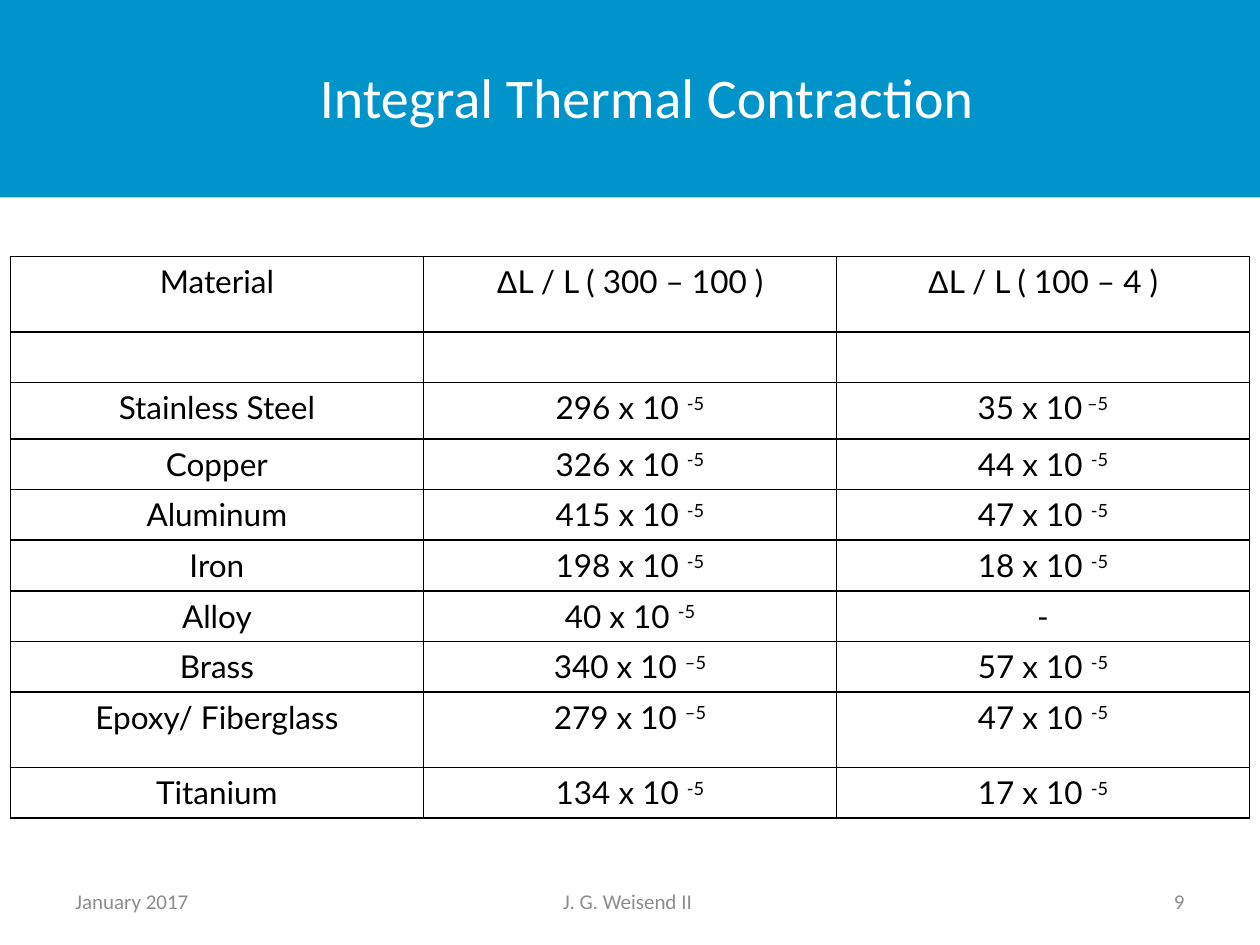
from dataclasses import dataclass

from lxml.etree import SubElement as Sub
from pptx import Presentation
from pptx.dml.color import RGBColor as Rgb
from pptx.enum.shapes import MSO_SHAPE as Kind
from pptx.enum.text import MSO_ANCHOR as Anchor, PP_ALIGN as Align
from pptx.oxml.ns import qn
from pptx.util import Cm, Pt


@dataclass(frozen=True)
class Theme:
    band: str = "0094CA"
    light: str = "FFFFFF"
    ink: str = "000000"
    grey: str = "8C8C8C"
    head: str = "Calibri"
    body: str = "Lato"
    greek: str = "Arial"
    big: int = 32
    mid: int = 18
    small: int = 12


ROWS = [
    ("Material", "ΔL / L ( 300 – 100 )", "ΔL / L ( 100 – 4 )"),
    ("", "", ""),
    ("Stainless Steel", "296 x 10 ^-5", "35 x 10^ –5"),
    ("Copper", "326 x 10 ^-5", "44 x 10 ^-5"),
    ("Aluminum", "415 x 10 ^-5", "47 x 10 ^-5"),
    ("Iron", "198 x 10 ^-5", "18 x 10 ^-5"),
    ("Alloy", "40 x 10 ^-5", "-"),
    ("Brass", "340 x 10 ^–5", "57 x 10 ^-5"),
    ("Epoxy/ Fiberglass", "279 x 10 ^–5", "47 x 10 ^-5"),
    ("Titanium", "134 x 10 ^-5", "17 x 10 ^-5"),
]
TALL = {"Material": 1.52, "Stainless Steel": 1.14, "Epoxy/ Fiberglass": 1.52}
ROW = 1.02


class Page:
    def __init__(self, slide, theme):
        self.slide, self.theme = slide, theme

    def run(self, para, text, face, size, color):
        run = para.add_run()
        run.text = text
        font = run.font
        font.name, font.size = face, Pt(size)
        font.color.rgb = Rgb.from_string(color)
        return run

    def band(self, high):
        look = self.theme
        shape = self.slide.shapes.add_shape(Kind.RECTANGLE, 0, 0, Cm(25.4), Cm(high))
        shape.shadow.inherit = False
        shape.fill.solid()
        shape.fill.fore_color.rgb = Rgb.from_string(look.band)
        shape.line.fill.background()
        # Index 2 is the back of the drawing order.
        self.slide.shapes._spTree.insert(2, shape._element)

    def title(self, text, left, top, wide, high):
        look, shape = self.theme, self.slide.shapes.title
        shape.left, shape.top = Cm(left), Cm(top)
        shape.width, shape.height = Cm(wide), Cm(high)
        frame = shape.text_frame
        frame.vertical_anchor = Anchor.MIDDLE
        para = frame.paragraphs[0]
        para.alignment = Align.CENTER
        self.run(para, text, look.head, look.big, look.light)

    def foot(self, text, left, wide, align):
        look = self.theme
        box = self.slide.shapes.add_textbox(Cm(left), Cm(17.66), Cm(wide), Cm(1.01))
        frame = box.text_frame
        frame.word_wrap = True
        frame.vertical_anchor = Anchor.MIDDLE
        para = frame.paragraphs[0]
        para.alignment = align
        self.run(para, text, look.head, look.small, look.grey)

    def edge(self, cell):
        props = cell._tc.get_or_add_tcPr()
        for side in ("lnL", "lnR", "lnT", "lnB"):
            line = Sub(props, qn("a:" + side), w=str(Pt(1)))
            fill = Sub(line, qn("a:solidFill"))
            Sub(fill, qn("a:srgbClr"), val=self.theme.ink)

    def cell(self, cell, text):
        """Fill a cell; a caret starts a superscript, a leading delta is Greek."""
        look = self.theme
        cell.margin_left = cell.margin_right = Cm(0.28)
        self.edge(cell)
        cell.fill.background()
        para = cell.text_frame.paragraphs[0]
        para.alignment = Align.CENTER
        base, _, power = text.partition("^")
        if base.startswith("Δ"):
            self.run(para, base[0], look.greek, look.mid, look.ink)
            base = base[1:]
        if base:
            self.run(para, base, look.body, look.mid, look.ink)
        if power:
            run = self.run(para, power, look.body, look.mid, look.ink)
            run._r.get_or_add_rPr().set("baseline", "30000")

    def table(self, rows, left, top, wide):
        highs = [TALL.get(row[0], ROW) for row in rows]
        cols = len(rows[0])
        table = self.slide.shapes.add_table(
            len(rows), cols, Cm(left), Cm(top), Cm(wide), Cm(sum(highs))).table
        table.first_row = table.horz_banding = False
        for col in table.columns:
            col.width = Cm(wide / cols)
        for line, high, row in zip(table.rows, highs, rows):
            line.height = Cm(high)
            for cell, text in zip(line.cells, row):
                self.cell(cell, text)


def main():
    deck = Presentation()
    deck.slide_width, deck.slide_height = Cm(25.4), Cm(19.05)
    page = Page(deck.slides.add_slide(deck.slide_layouts[5]), Theme())
    page.band(3.98)
    page.title("Integral Thermal Contraction", 3.12, 0.35, 19.84, 3.18)
    page.foot("January 2017", 1.27, 5.93, Align.LEFT)
    page.foot("J. G. Weisend II ", 8.68, 8.04, Align.CENTER)
    page.foot("9", 18.2, 5.93, Align.RIGHT)
    page.table(ROWS, 0.21, 5.17, 24.98)
    deck.save("out.pptx")


if __name__ == "__main__":
    main()
